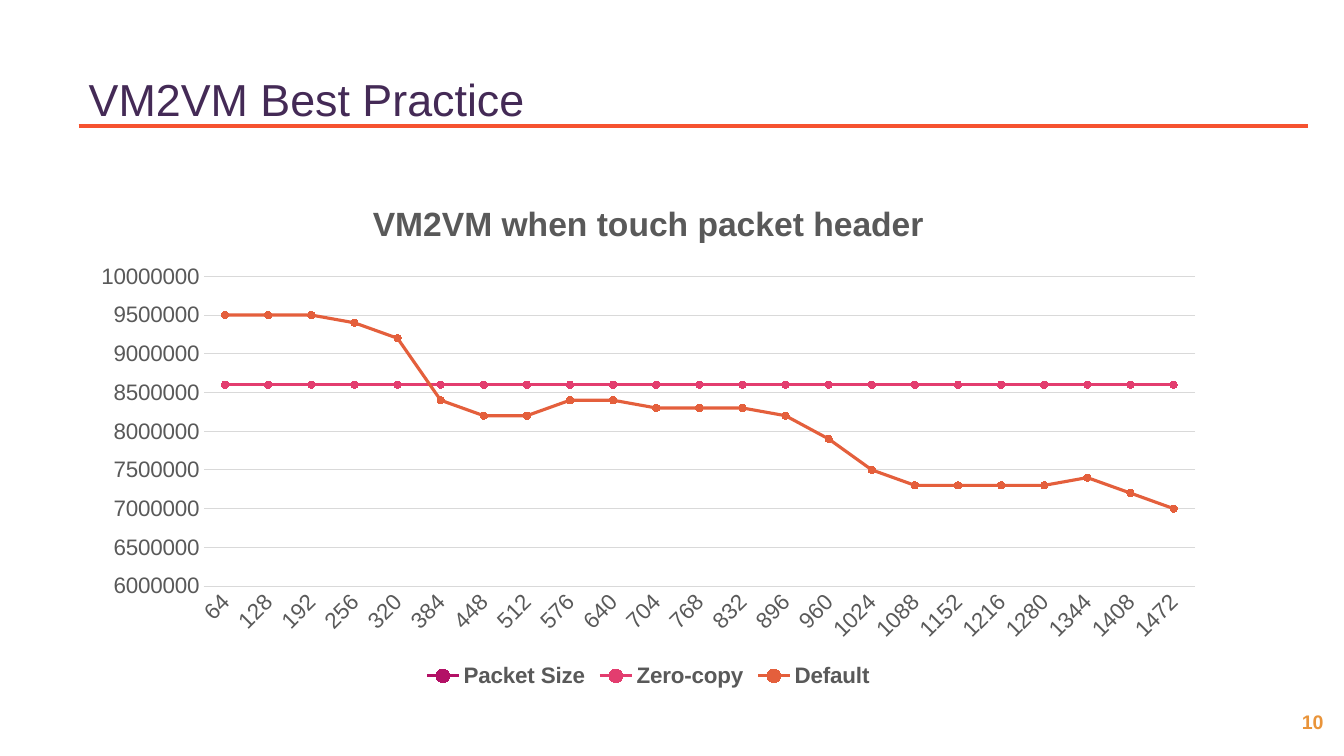
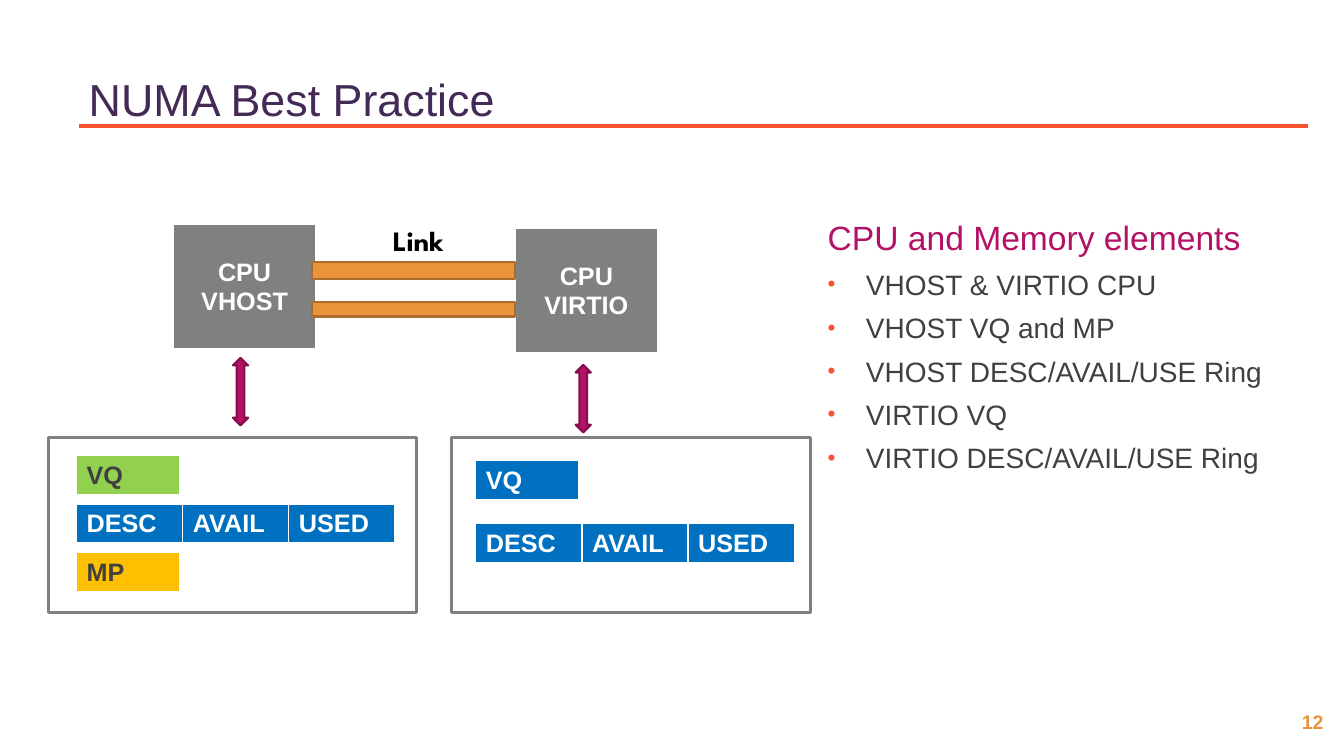
from lxml.etree import SubElement
from pptx import Presentation
from pptx.chart.data import CategoryChartData
from pptx.dml.color import RGBColor
from pptx.enum.chart import XL_CHART_TYPE as ChartType, XL_LEGEND_POSITION as LegendPosition
from pptx.enum.chart import XL_MARKER_STYLE as MarkerStyle, XL_TICK_MARK as TickMark
from pptx.enum.shapes import MSO_CONNECTOR as Connector, MSO_SHAPE as Preset
from pptx.enum.text import MSO_ANCHOR as Anchor, MSO_AUTO_SIZE as AutoSize, PP_ALIGN as Align
from pptx.oxml.ns import qn
from pptx.util import Inches, Pt

WIDTH, HEIGHT = Inches(13.33), Inches(7.5)
FONT = "Arial"
LEFT_EDGE, RIGHT_EDGE = 5.85, 97.3

WHITE = RGBColor(0xFF, 0xFF, 0xFF)
BLACK = RGBColor(0, 0, 0)
PURPLE = RGBColor(0x44, 0x2A, 0x56)
RED_ORANGE = RGBColor(0xF6, 0x52, 0x30)
ORANGE = RGBColor(0xE9, 0x94, 0x3A)
DARK_ORANGE = RGBColor(0xAC, 0x6D, 0x2B)
MAGENTA = RGBColor(0xB3, 0x11, 0x66)
DARK_MAGENTA = RGBColor(0x84, 0x0D, 0x4B)
PINK = RGBColor(0xE3, 0x3D, 0x6F)
RUST = RGBColor(0xE4, 0x5F, 0x3C)
GRAY = RGBColor(0x80, 0x80, 0x80)
LIGHT_GRAY = RGBColor(0xD9, 0xD9, 0xD9)
CHART_GRAY = RGBColor(0x59, 0x59, 0x59)
TEXT_GRAY = RGBColor(0x40, 0x40, 0x40)
BLUE = RGBColor(0x00, 0x70, 0xC0)
GREEN = RGBColor(0x92, 0xD0, 0x50)
AMBER = RGBColor(0xFF, 0xC0, 0x00)

CELL_WIDTH, RING_WIDTH, CELL_HEIGHT = 7.65, 7.9, 5.33
RING = ["DESC", "AVAIL", "USED"]
ELEMENTS = ["VHOST & VIRTIO CPU", "VHOST VQ and MP", "VHOST DESC/AVAIL/USE Ring",
            "VIRTIO VQ", "VIRTIO DESC/AVAIL/USE Ring"]

PACKET_SIZES = range(64, 1473, 64)
DEFAULT_MILLIONS = [9.5, 9.5, 9.5, 9.4, 9.2, 8.4, 8.2, 8.2, 8.4, 8.4, 8.3, 8.3,
                    8.3, 8.2, 7.9, 7.5, 7.3, 7.3, 7.3, 7.3, 7.4, 7.2, 7.0]
SERIES = [("Packet Size", [0] * len(PACKET_SIZES), MAGENTA),
          ("Zero-copy", [8600000] * len(PACKET_SIZES), PINK),
          ("Default", [round(value * 1000000) for value in DEFAULT_MILLIONS], RUST)]


def across(percent):
    return round(WIDTH * percent / 100)


def down(percent):
    return round(HEIGHT * percent / 100)


def area(left, top, width, height):
    return across(left), down(top), across(width), down(height)


def place(shape, *box):
    shape.left, shape.top, shape.width, shape.height = area(*box)


def style(font, size, color, bold=False, name=FONT):
    font.name, font.size, font.bold = name, Pt(size), bold
    font.color.rgb = color


def outline(line, color, width):
    line.color.rgb = color
    line.width = Pt(width)


def write(frame, lines, size, color, bold=False, name=FONT, align=Align.LEFT,
          anchor=Anchor.TOP, after=0, bullet=None):
    frame.word_wrap = True
    frame.auto_size = AutoSize.NONE
    frame.vertical_anchor = anchor
    frame.text = "\n".join(lines)
    for paragraph in frame.paragraphs:
        mark_bullet(paragraph, bullet)
        paragraph.alignment = align
        paragraph.space_before, paragraph.space_after = Pt(0), Pt(after)
        style(paragraph.font, size, color, bold, name)


def mark_bullet(paragraph, color):
    properties = paragraph._p.get_or_add_pPr()
    indent = Inches(0.38) if color else 0
    properties.set("marL", str(indent))
    properties.set("indent", str(-indent))
    if color is None:
        SubElement(properties, qn("a:buNone"))
        return
    tint = SubElement(properties, qn("a:buClr"))
    SubElement(tint, qn("a:srgbClr"), val=str(color))
    SubElement(properties, qn("a:buSzPct"), val="80000")
    SubElement(properties, qn("a:buFont"), typeface=FONT)
    SubElement(properties, qn("a:buChar"), char="•")


def add_label(slide, text, box, size, color, **options):
    label = slide.shapes.add_textbox(*area(*box))
    write(label.text_frame, [text], size, color, bold=True, **options)


def add_slide(deck, layout, title, number):
    slide = deck.slides.add_slide(deck.slide_layouts.get_by_name(layout))
    add_label(slide, number, (95.35, 93.2, 4.65, 4.53), 14, ORANGE, align=Align.CENTER)
    rule = slide.shapes.add_connector(Connector.STRAIGHT, across(LEFT_EDGE), down(16.67),
                                      across(RIGHT_EDGE), down(16.67))
    outline(rule.line, RED_ORANGE, 2.25)
    SubElement(rule._element.spPr, qn("a:effectLst"))
    place(slide.shapes.title, LEFT_EDGE, 7.87, 64.8, 10.27)
    write(slide.shapes.title.text_frame, [title], 32, PURPLE, anchor=Anchor.MIDDLE)
    return slide


def add_block(slide, preset, box, fill, line, width):
    block = slide.shapes.add_shape(preset, *area(*box))
    block.shadow.inherit = False
    outline(block.line, line, width)
    if fill is None:
        block.fill.background()
    else:
        block.fill.solid()
        block.fill.fore_color.rgb = fill


def add_borders(cell):
    properties = cell._tc.get_or_add_tcPr()
    for side, width in (("L", 1), ("R", 1), ("T", 1), ("B", 3)):
        border = SubElement(properties, qn("a:ln" + side), w=str(Pt(width)))
        paint = SubElement(border, qn("a:solidFill"))
        SubElement(paint, qn("a:srgbClr"), val=str(WHITE))


def add_cells(slide, texts, left, top, fill, color=WHITE, width=CELL_WIDTH,
              height=CELL_HEIGHT, align=Align.LEFT):
    box = area(left, top, width * len(texts), height)
    table = slide.shapes.add_table(1, len(texts), *box).table
    table.first_row = table.horz_banding = False
    for cell, text in zip(table.iter_cells(), texts):
        add_borders(cell)
        cell.fill.solid()
        cell.fill.fore_color.rgb = fill
        cell.vertical_anchor = Anchor.MIDDLE
        cell.text = text
        for paragraph in cell.text_frame.paragraphs:
            paragraph.alignment = align
            style(paragraph.font, 18, color, bold=True)


def add_throughput_chart(slide):
    data = CategoryChartData()
    data.categories = [str(size) for size in PACKET_SIZES]
    for name, values, _ in SERIES:
        data.add_series(name, values)
    chart = slide.shapes.add_chart(ChartType.LINE_MARKERS,
                                   *area(LEFT_EDGE, 23.87, 84.77, 67.73), data).chart
    style(chart.font, 16, BLACK)
    chart.has_title = True
    heading = chart.chart_title.text_frame
    heading.text = "VM2VM when touch packet header"
    style(heading.paragraphs[0].font, 24, CHART_GRAY, bold=True)
    chart.chart_title.include_in_layout = False
    chart.has_legend = True
    chart.legend.position = LegendPosition.BOTTOM
    chart.legend.include_in_layout = False
    style(chart.legend.font, 16, CHART_GRAY, bold=True)

    sizes, rates = chart.category_axis, chart.value_axis
    for axis in (sizes, rates):
        axis.major_tick_mark = axis.minor_tick_mark = TickMark.NONE
        style(axis.tick_labels.font, 16, CHART_GRAY)
    outline(sizes.format.line, LIGHT_GRAY, 0.75)
    sizes._element.find(qn("c:txPr")).find(qn("a:bodyPr")).set("rot", "-2700000")
    rates.format.line.fill.background()
    rates.minimum_scale, rates.maximum_scale, rates.major_unit = 6000000, 10000000, 500000
    rates.tick_labels.number_format = "General"
    rates.tick_labels.number_format_is_linked = False
    rates.has_major_gridlines = True
    outline(rates.major_gridlines.format.line, LIGHT_GRAY, 0.75)

    chart.plots[0].vary_by_categories = False
    for series, (_, _, color) in zip(chart.plots[0].series, SERIES):
        series.smooth = False
        outline(series.format.line, color, 2.25)
        series.marker.style, series.marker.size = MarkerStyle.CIRCLE, 5
        series.marker.format.fill.solid()
        series.marker.format.fill.fore_color.rgb = color
        outline(series.marker.format.line, color, 0.75)


def add_memory(slide, left, width):
    add_block(slide, Preset.RECTANGLE, (left, 57.87, width, 23.2), None, GRAY, 2.25)


def add_cpu(slide, role, left, top):
    add_cells(slide, ["CPU\n" + role], left, top, GRAY, width=10.6, height=16.53,
              align=Align.CENTER)


def add_diagram(slide):
    add_memory(slide, 3.6, 27.4)
    add_cells(slide, ["VQ"], 5.7, 60.27, GREEN, TEXT_GRAY)
    add_cells(slide, RING, 5.7, 66.67, BLUE, width=RING_WIDTH)
    add_cells(slide, ["MP"], 5.7, 73.07, AMBER, TEXT_GRAY)
    add_memory(slide, 33.6, 26.7)
    add_cells(slide, ["VQ"], 35.4, 60.93, BLUE)
    add_cells(slide, RING, 35.4, 69.2, BLUE, width=RING_WIDTH)
    add_cpu(slide, "VHOST", 12.9, 29.73)
    add_cpu(slide, "VIRTIO", 38.33, 30.27)
    for left, top in ((17.33, 47.33), (42.83, 48.27)):
        add_block(slide, Preset.UP_DOWN_ARROW, (left, top, 1.13, 8.93),
                  MAGENTA, DARK_MAGENTA, 1.5)
    for top, height in ((34.67, 2.27), (40, 1.87)):
        add_block(slide, Preset.RECTANGLE, (23.25, top, 15.08, height),
                  ORANGE, DARK_ORANGE, 1.5)
    add_label(slide, "Link", (28.5, 28.93, 10.28, 5.87), 20, BLACK, name="League Spartan")


def add_element_list(slide):
    _, heading, elements, *unused = slide.placeholders
    for placeholder in unused:
        placeholder._element.getparent().remove(placeholder._element)
    place(heading, 60.83, 26.27, 39.17, 8.4)
    write(heading.text_frame, ["CPU and Memory elements"], 24, MAGENTA,
          anchor=Anchor.BOTTOM, after=6)
    place(elements, 60.83, 34.67, 39.17, 41.47)
    write(elements.text_frame, ELEMENTS, 20, TEXT_GRAY, after=7, bullet=RED_ORANGE)


def main():
    deck = Presentation()
    deck.slide_width, deck.slide_height = WIDTH, HEIGHT
    add_throughput_chart(add_slide(deck, "Title Only", "VM2VM Best Practice", "10"))
    numa = add_slide(deck, "Comparison", "NUMA Best Practice", "12")
    add_diagram(numa)
    add_element_list(numa)
    deck.save("out.pptx")


if __name__ == "__main__":
    main()
